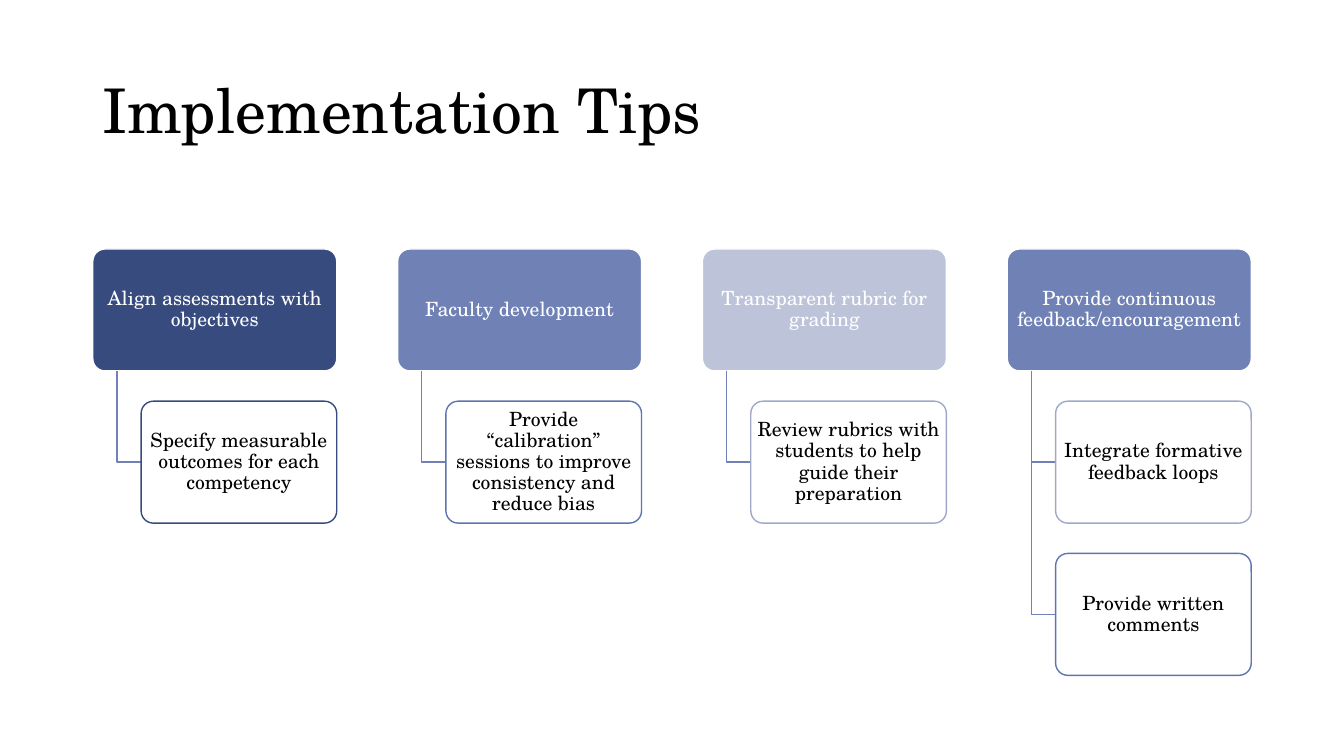
from lxml.etree import SubElement
from pptx import Presentation
from pptx.dml.color import RGBColor
from pptx.enum.shapes import MSO_SHAPE
from pptx.enum.text import MSO_ANCHOR, MSO_AUTO_SIZE, PP_ALIGN
from pptx.oxml.ns import qn
from pptx.util import Inches, Pt

COLORS = {
    "navy": "374B7F", "blue": "7081B6", "pale": "BDC3D8", "mid": "5F74B0",
    "mist": "9FA8C9", "link": "7181B7", "white": "FFFFFF", "black": "000000",
}
FONT = "TeX Gyre Schola"
LEFT, TOP = 0.92, 2.47
PITCH = (9.99 - LEFT) / 3
HEAD_W, TIP_W, BOX_H = 2.42, 1.94, 1.21
STEP = 1.51
STEM, INDENT = 0.24, 0.48

# Heading, heading fill, then each tip with its outline colour
TOPICS = [
    ("Align assessments with objectives", "navy",
     [("Specify measurable outcomes for each competency", "navy")]),
    ("Faculty development", "blue",
     [("Provide “calibration” sessions to improve consistency and reduce bias",
       "mid")]),
    ("Transparent rubric for grading", "pale",
     [("Review rubrics with students to help guide their preparation", "mist")]),
    ("Provide continuous feedback/encouragement", "blue",
     [("Integrate formative feedback loops", "mist"),
      ("Provide written comments", "mid")]),
]


def color(name):
    return RGBColor.from_string(COLORS[name])


def apply(item, values):
    """Set each named attribute of item."""
    for name, value in values.items():
        setattr(item, name, value)


def write(frame, text, size, tint, align, **margins):
    apply(frame, {"word_wrap": True, "auto_size": MSO_AUTO_SIZE.NONE,
                  "vertical_anchor": MSO_ANCHOR.MIDDLE, **margins})
    frame.text = text
    para = frame.paragraphs[0]
    apply(para, {"alignment": align, "line_spacing": 0.9})
    font = para.runs[0].font
    apply(font, {"name": FONT, "size": Pt(size)})
    font.color.rgb = color(tint)


def add_title(slide, text):
    title = slide.shapes.title
    apply(title, {"left": Inches(LEFT), "top": Inches(0.4),
                  "width": Inches(11.5), "height": Inches(1.45)})
    write(title.text_frame, text, 44, "black", PP_ALIGN.LEFT)


def add_box(slide, x, y, width, text, fill, line, tint):
    box = slide.shapes.add_shape(
        MSO_SHAPE.ROUNDED_RECTANGLE,
        Inches(x), Inches(y), Inches(width), Inches(BOX_H))
    box.adjustments[0] = 0.1
    box.shadow.inherit = False
    box.fill.solid()
    box.fill.fore_color.rgb = color(fill)
    box.line.color.rgb = color(line)
    box.line.width = Pt(1)
    write(box.text_frame, text, 14, tint, PP_ALIGN.CENTER,
          margin_left=Inches(0.03), margin_right=Inches(0.03),
          margin_top=Inches(0.02), margin_bottom=Inches(0.02))
    return box


def fade(box, percent):
    """Set the opacity of a solid fill."""
    tone = box.fill._xPr.find(qn("a:solidFill"))[0]
    SubElement(tone, qn("a:alpha")).set("val", str(percent * 1000))


def add_elbow(slide, x, top, end_x, end_y):
    pen = slide.shapes.build_freeform(Inches(x), Inches(top))
    pen.add_line_segments([(Inches(x), Inches(end_y)),
                           (Inches(end_x), Inches(end_y))], close=False)
    elbow = pen.convert_to_shape()
    elbow.shadow.inherit = False
    elbow.fill.background()
    elbow.line.color.rgb = color("link")
    elbow.line.width = Pt(1)


def add_topic(slide, x, head, fill, tips):
    add_box(slide, x, TOP, HEAD_W, head, fill, "white", "white")
    for row, (text, line) in enumerate(tips, 1):
        y = TOP + row * STEP
        add_elbow(slide, x + STEM, TOP + BOX_H, x + INDENT, y + BOX_H / 2)
        tip = add_box(slide, x + INDENT, y, TIP_W, text, "white", line, "black")
        fade(tip, 90)


def main():
    deck = Presentation()
    apply(deck, {"slide_width": Inches(13.33), "slide_height": Inches(7.5)})
    slide = deck.slides.add_slide(deck.slide_layouts[5])
    add_title(slide, "Implementation Tips")
    for col, topic in enumerate(TOPICS):
        add_topic(slide, LEFT + col * PITCH, *topic)
    deck.save("out.pptx")


if __name__ == "__main__":
    main()
